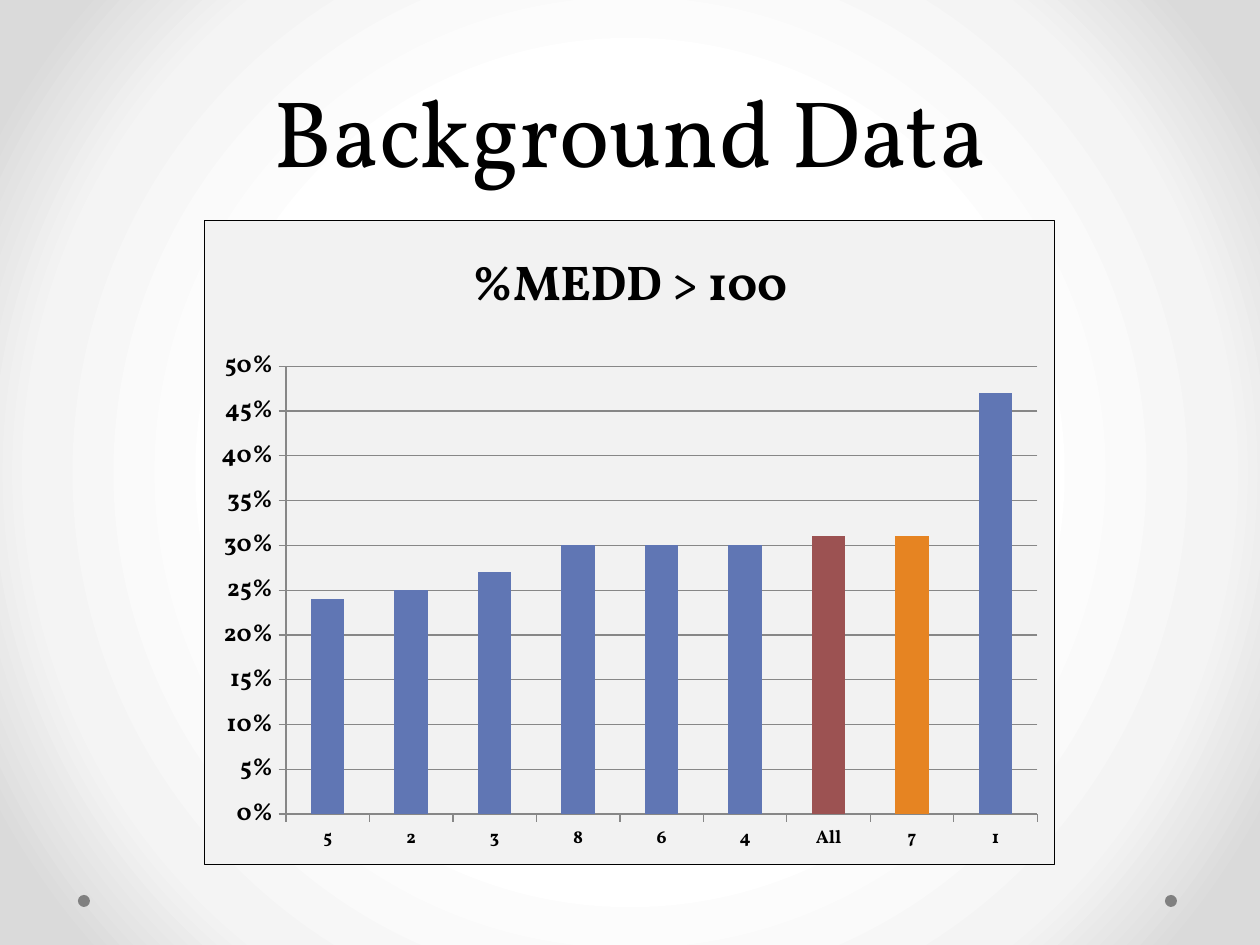
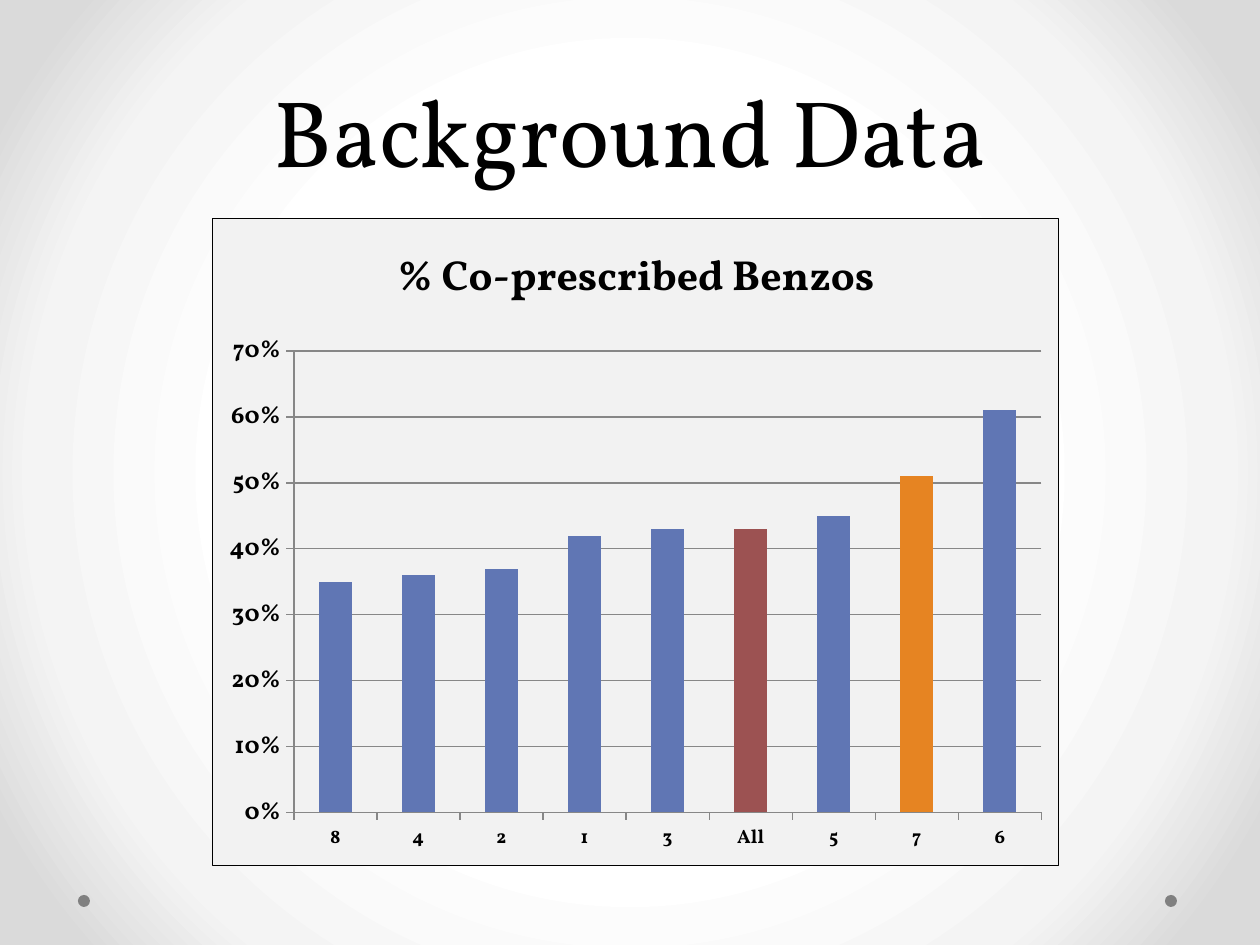
"""Build two slides of background data, each with a titled column chart."""
import pptx
import pptx.chart.data
import pptx.dml.color
import pptx.enum.chart
import pptx.enum.shapes
import pptx.enum.text
import pptx.oxml
import pptx.oxml.ns
import pptx.util

COLORS = {
    "text": "000000", "panel": "F2F2F2", "grid": "878787", "dot": "808080",
    "column": "6076B4", "All": "9C5252", "7": "E68422",
}
FONT = "Vollkorn"
SIZE = (1260, 945)
TITLE_BOX = (63, 0, 1134, 193)
DOT_LEFTS, DOT_TOP, DOT_SIZE = (78, 1165), 895, 12
BACKGROUND_STOPS = [(50, "FFFFFF"), (76, "F4F4F4"), (92, "DADADA")]

SLIDES = [
    {
        "title": "Background Data", "chart": "%MEDD > 100", "box": (204, 220, 851, 645),
        "title_size": 28, "category_size": 10.5, "maximum": 0.5, "step": 0.05,
        "values": [("5", 0.24), ("2", 0.25), ("3", 0.27), ("8", 0.3), ("6", 0.3),
                   ("4", 0.3), ("All", 0.31), ("7", 0.31), ("1", 0.47)],
    },
    {
        "title": "Background Data", "chart": "% Co-prescribed Benzos", "box": (212, 218, 847, 648),
        "title_size": 24, "category_size": 11, "maximum": 0.7, "step": 0.1,
        "values": [("8", 0.35), ("4", 0.36), ("2", 0.37), ("1", 0.42), ("3", 0.43),
                   ("All", 0.43), ("5", 0.45), ("7", 0.51), ("6", 0.61)],
    },
]


def px(length):
    return pptx.util.Emu(round(length * 914400 / 126))


def rgb(name):
    return pptx.dml.color.RGBColor.from_string(COLORS[name])


def style_font(font, size, bold=False):
    font.name = FONT
    font.size = pptx.util.Pt(size)
    font.bold = bold
    font.color.rgb = rgb("text")


def solid(name):
    return f'<a:solidFill><a:srgbClr val="{COLORS[name]}"/></a:solidFill>'


def chart_panel(line):
    return pptx.oxml.parse_xml(
        f'<c:spPr {pptx.oxml.ns.nsdecls("c", "a")}>{solid("panel")}{line}</c:spPr>')


def paint_background(master):
    master.background.fill.gradient()
    gradient = master.element.find(".//" + pptx.oxml.ns.qn("a:gradFill"))
    stops = "".join(f'<a:gs pos="{position * 1000}"><a:srgbClr val="{color}"/></a:gs>'
                    for position, color in BACKGROUND_STOPS)
    center = " ".join(f'{side}="50000"' for side in "ltrb")
    gradient.getparent().replace(gradient, pptx.oxml.parse_xml(
        f'<a:gradFill {pptx.oxml.ns.nsdecls("a")} rotWithShape="1"><a:gsLst>{stops}</a:gsLst>'
        f'<a:path path="circle"><a:fillToRect {center}/></a:path></a:gradFill>'))


def add_dots(slide):
    for left in DOT_LEFTS:
        dot = slide.shapes.add_shape(pptx.enum.shapes.MSO_SHAPE.OVAL,
                                     *map(px, (left, DOT_TOP, DOT_SIZE, DOT_SIZE)))
        dot.shadow.inherit = False
        dot.fill.solid()
        dot.fill.fore_color.rgb = rgb("dot")
        dot.line.fill.background()


def set_title(slide, text):
    title = slide.shapes.title
    title.left, title.top, title.width, title.height = map(px, TITLE_BOX)
    frame = title.text_frame
    frame.text = text
    frame.auto_size = pptx.enum.text.MSO_AUTO_SIZE.NONE
    frame.vertical_anchor = pptx.enum.text.MSO_ANCHOR.BOTTOM
    paragraph = frame.paragraphs[0]
    paragraph.alignment = pptx.enum.text.PP_ALIGN.CENTER
    paragraph.line_spacing = pptx.util.Pt(58)
    style_font(paragraph.runs[0].font, 54)


def style_line(line):
    line.color.rgb = rgb("grid")
    line.width = pptx.util.Pt(0.75)


def add_column_chart(slide, content):
    data = pptx.chart.data.CategoryChartData(number_format="0%")
    data.categories = [category for category, value in content["values"]]
    data.add_series(content["chart"], [value for category, value in content["values"]])
    chart = slide.shapes.add_chart(pptx.enum.chart.XL_CHART_TYPE.COLUMN_CLUSTERED,
                                   *map(px, content["box"]), data).chart
    style_font(chart.font, 10)
    chart.has_legend = False
    chart.has_title = True
    title = chart.chart_title
    title.include_in_layout = False
    title.text_frame.text = content["chart"]
    style_font(title.text_frame.paragraphs[0].runs[0].font, content["title_size"], True)

    plot = chart.plots[0]
    plot.gap_width = 150
    plot.vary_by_categories = False
    series = plot.series[0]
    series.invert_if_negative = False
    series.format.fill.solid()
    series.format.fill.fore_color.rgb = rgb("column")
    for index, (category, value) in enumerate(content["values"]):
        if category in COLORS:
            fill = series.points[index].format.fill
            fill.solid()
            fill.fore_color.rgb = rgb(category)

    value_axis = chart.value_axis
    value_axis.minimum_scale, value_axis.maximum_scale = 0, content["maximum"]
    value_axis.major_unit = content["step"]
    value_axis.tick_labels.number_format = "0%"
    value_axis.tick_labels.number_format_is_linked = False
    style_line(value_axis.major_gridlines.format.line)
    for axis, size in ((chart.category_axis, content["category_size"]), (value_axis, 14)):
        style_font(axis.tick_labels.font, size, True)
        style_line(axis.format.line)

    chart_element = chart.element.find(pptx.oxml.ns.qn("c:chart"))
    chart_element.addnext(chart_panel(f'<a:ln w="9525">{solid("text")}</a:ln>'))
    plot_area = chart_element.find(pptx.oxml.ns.qn("c:plotArea"))
    plot_area.append(chart_panel("<a:ln><a:noFill/></a:ln>"))


def main():
    presentation = pptx.Presentation()
    presentation.slide_width, presentation.slide_height = map(px, SIZE)
    paint_background(presentation.slide_master)
    title_only = presentation.slide_layouts[5]
    for content in SLIDES:
        slide = presentation.slides.add_slide(title_only)
        add_dots(slide)
        set_title(slide, content["title"])
        add_column_chart(slide, content)
    presentation.save("out.pptx")


if __name__ == "__main__":
    main()
